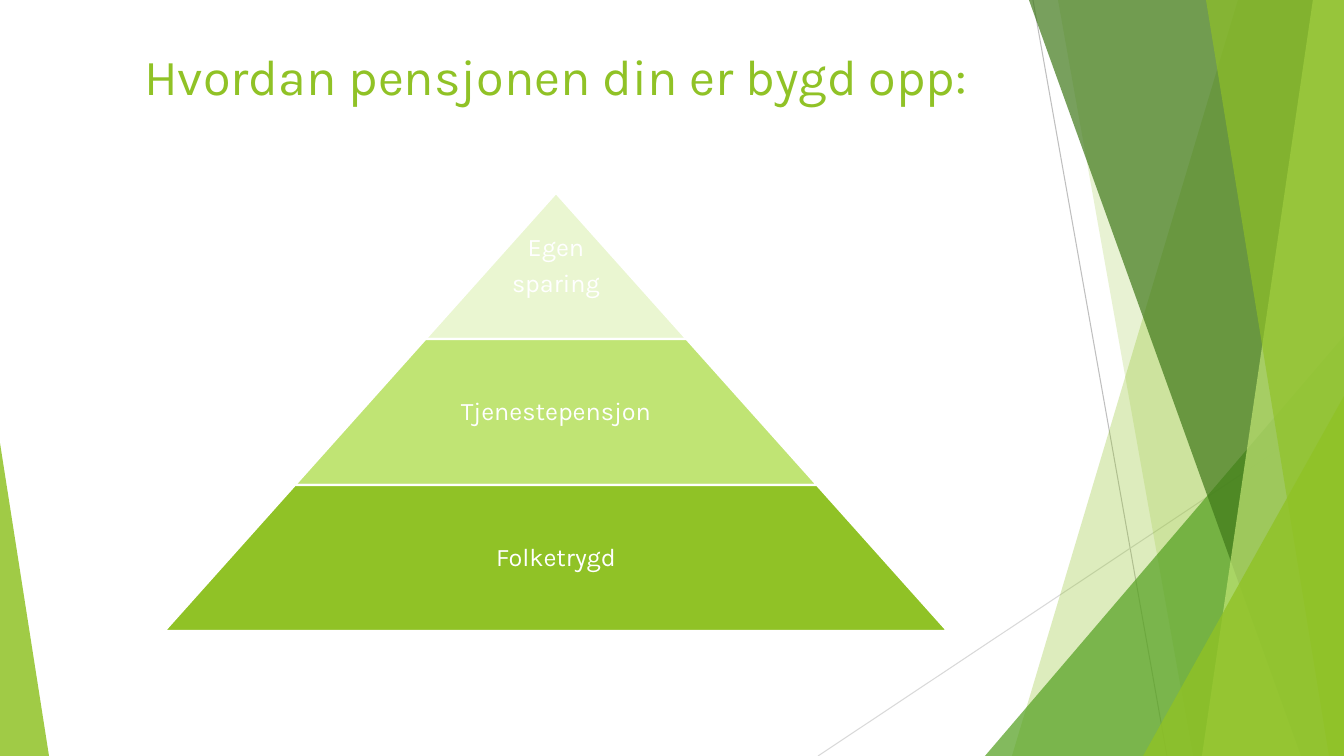
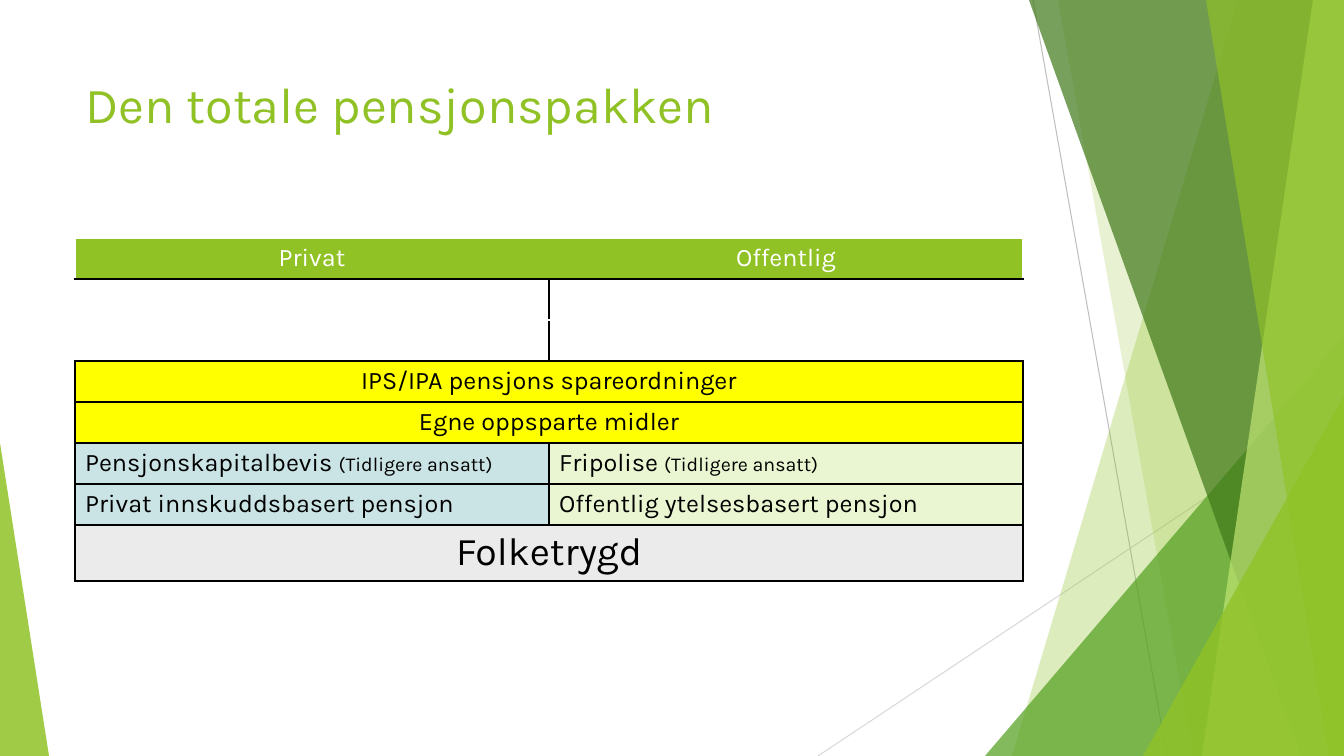
from lxml.etree import SubElement
from pptx import Presentation
from pptx.dml.color import RGBColor
from pptx.enum.shapes import MSO_CONNECTOR, MSO_SHAPE
from pptx.enum.text import MSO_ANCHOR, MSO_AUTO_SIZE, PP_ALIGN
from pptx.oxml.ns import qn
from pptx.util import Pt

PX = 12192000 / 1344  # EMU per px
W, H = 1344, 756
FONT = "Karla"
GREEN, LIME, PALE = "90C226", "C0E474", "EAF6D1"
LEAF, FOREST = "54A021", "3F7819"
WHITE, BLACK, YELLOW, BLUE, GRAY = "FFFFFF", "000000", "FFFF00", "CAE3E4", "EBEBEB"
LEFT, CENTER = PP_ALIGN.LEFT, PP_ALIGN.CENTER

# Shared decoration, back to front
DECOR = [
    ("line", (1033, 0, 1167, H), "BFBFBF"),
    ("line", (W, 406, 818, H), "D9D9D9"),
    ("band", (1238, 1012), GREEN, 30),  # left edge: x at top, x at bottom
    ("band", (1058, 1193), GREEN, 20),
    ("triangle", (985, 336, 359, 420), LEAF, 72, 1),
    ("band", (1029, 1301), FOREST, 70),
    ("band", (1313, 1202), LIME, 70),
    ("band", (1206, 1329), GREEN, 65),
    ("triangle", (1143, 396, 201, 360), GREEN, 80, 1),
    ("triangle", (0, 443, 49, 313), GREEN, 85, 0),
]

# Slide 1: pyramid tiers from the top
PYRAMID_TITLE = "Hvordan pensjonen din er bygd opp:"
TIERS = [(["Egen", "sparing"], PALE), (["Tjenestepensjon"], LIME), (["Folketrygd"], GREEN)]
APEX_X, APEX_Y, TIER_W, TIER_H = 556, 193, 261, 146

# Slide 2: rows of cells (text, fill); a single cell spans both columns
PACKAGE_TITLE = "Den totale pensjonspakken"
FORMER = ("(Tidligere ansatt)", 14)
ROWS = [
    [("Privat", GREEN), ("Offentlig", GREEN)],
    [("", None), ("", None)],
    [("", None), ("", None)],
    [("IPS/IPA pensjons spareordninger", YELLOW)],
    [("Egne oppsparte midler", YELLOW)],
    [([("Pensjonskapitalbevis ", 18), FORMER], BLUE), ([("Fripolise ", 18), FORMER], PALE)],
    [("Privat innskuddsbasert pensjon", BLUE), ("Offentlig ytelsesbasert pensjon", PALE)],
    [([("Folketrygd", 28)], GRAY)],
]
TABLE_X, TABLE_Y, COL_W, ROW_H, LAST_H = 75, 238, 474, 41, 56


def px(*values):
    return [round(v * PX) for v in values]


def rgb(hex_color):
    return RGBColor.from_string(hex_color)


def write(tf, paragraphs, size=18, color=BLACK, align=LEFT, spacing=None, after=None):
    """Each paragraph is a string or a list of (text, size) runs."""
    for i, runs in enumerate(paragraphs):
        p = tf.paragraphs[0] if i == 0 else tf.add_paragraph()
        p.alignment = align
        if spacing:
            p.line_spacing = spacing
        if after:
            p.space_after = Pt(after)
        for text, run_size in [(runs, size)] if isinstance(runs, str) else runs:
            r = p.add_run()
            r.text = text
            r.font.name, r.font.size = FONT, Pt(run_size)
            r.font.color.rgb = rgb(color)


def paint(sp, fill, alpha=None, line=None):
    sp.shadow.inherit = False
    sp.fill.solid()
    sp.fill.fore_color.rgb = rgb(fill)
    if alpha is not None:
        clr = next(sp.element.spPr.iter(qn("a:srgbClr")))
        SubElement(clr, qn("a:alpha"), val=str(alpha * 1000))
    if line:
        sp.line.color.rgb = rgb(line)
        sp.line.width = Pt(1.5)
    else:
        sp.line.fill.background()


def add_decor(s, layout):
    """Draw the decoration once and keep it on the layout."""
    for i, (kind, place, color, *extra) in enumerate(DECOR):
        if kind == "line":
            sp = s.shapes.add_connector(MSO_CONNECTOR.STRAIGHT, *px(*place))
            sp.line.color.rgb = rgb(color)
            sp.line.width = Pt(0.75)
            SubElement(sp.element.spPr, qn("a:effectLst"))
        elif kind == "band":
            top_x, bottom_x = place
            outline = s.shapes.build_freeform(top_x, 0, scale=PX)
            outline.add_line_segments([(W, 0), (W, H), (bottom_x, H)], close=True)
            sp = outline.convert_to_shape()
            paint(sp, color, extra[0])
        else:
            sp = s.shapes.add_shape(MSO_SHAPE.ISOSCELES_TRIANGLE, *px(*place))
            sp.adjustments[0] = extra[1]
            paint(sp, color, extra[0])
        sp.element.xpath(".//p:cNvPr")[0].set("id", str(100 + i))
        layout.shapes.element.insert(2 + i, sp.element)


def set_title(s, text, box, align):
    title = s.shapes.title
    title.left, title.top, title.width, title.height = px(*box)
    tf = title.text_frame
    tf.word_wrap = True
    tf.auto_size = MSO_AUTO_SIZE.NONE
    tf.vertical_anchor = MSO_ANCHOR.TOP
    write(tf, [text], size=36, color=GREEN, align=align)


def add_pyramid(s):
    for i, (label, color) in enumerate(TIERS):
        width = TIER_W * (i + 1)
        box = px(APEX_X - width / 2, APEX_Y + i * TIER_H, width, TIER_H)
        sp = s.shapes.add_shape(MSO_SHAPE.TRAPEZOID, *box)
        sp.adjustments[0] = TIER_W / 2 / TIER_H
        paint(sp, color, line=WHITE)
        tf = sp.text_frame
        tf.word_wrap = False
        tf.vertical_anchor = MSO_ANCHOR.MIDDLE
        tf.margin_left = tf.margin_right = tf.margin_top = 0
        # A trapezoid's text area starts lower the more it tapers
        tf.margin_bottom = px(TIER_H / 3 / (i + 1))[0]
        write(tf, label, color=WHITE, align=CENTER, spacing=0.9, after=6.3)


def set_borders(cell, **sides):
    tcPr = cell._tc.get_or_add_tcPr()
    for i, side in enumerate("LRTB"):
        color = sides[side]
        ln = SubElement(tcPr, qn("a:ln" + side), w=str(Pt(1) if color else 0))
        if color:
            fill = SubElement(ln, qn("a:solidFill"))
            SubElement(fill, qn("a:srgbClr"), val=color)
        else:
            SubElement(ln, qn("a:noFill"))
        tcPr.insert(i, ln)


def add_package_table(s):
    n = len(ROWS)
    heights = [ROW_H] * (n - 1) + [LAST_H]
    box = px(TABLE_X, TABLE_Y, 2 * COL_W, sum(heights))
    table = s.shapes.add_table(n, 2, *box).table
    table.first_row = table.horz_banding = False
    for col in table.columns:
        col.width = px(COL_W)[0]
    # Horizontal rules: white above the header and between the empty rows
    rules = [WHITE if i in (0, 2) else BLACK for i in range(n + 1)]
    for i, cells in enumerate(ROWS):
        table.rows[i].height = px(heights[i])[0]
        merged = len(cells) == 1
        if merged:
            table.cell(i, 0).merge(table.cell(i, 1))
        outer = WHITE if i < 3 else BLACK
        middle = None if i == 0 or merged else BLACK
        for j in range(2):
            cell = table.cell(i, j)
            set_borders(cell, L=middle if j else outer,
                        R=outer if j or merged else middle,
                        T=rules[i], B=rules[i + 1])
        for j, (text, fill) in enumerate(cells):
            cell = table.cell(i, j)
            if fill:
                cell.fill.solid()
                cell.fill.fore_color.rgb = rgb(fill)
            else:
                cell.fill.background()
            if text:
                write(cell.text_frame, [text], color=BLACK if i else WHITE,
                      align=CENTER if i == 0 or merged else LEFT)


def main():
    prs = Presentation()
    prs.slide_width, prs.slide_height = px(W, H)
    layout = prs.slide_layouts[5]

    # Slide 1: pyramid
    s = prs.slides.add_slide(layout)
    add_decor(s, layout)
    set_title(s, PYRAMID_TITLE, (36, 40, 1040, 152), CENTER)
    add_pyramid(s)

    # Slide 2: table
    s = prs.slides.add_slide(layout)
    set_title(s, PACKAGE_TITLE, (75, 68, 948, 145), LEFT)
    add_package_table(s)

    prs.save("out.pptx")


if __name__ == "__main__":
    main()
